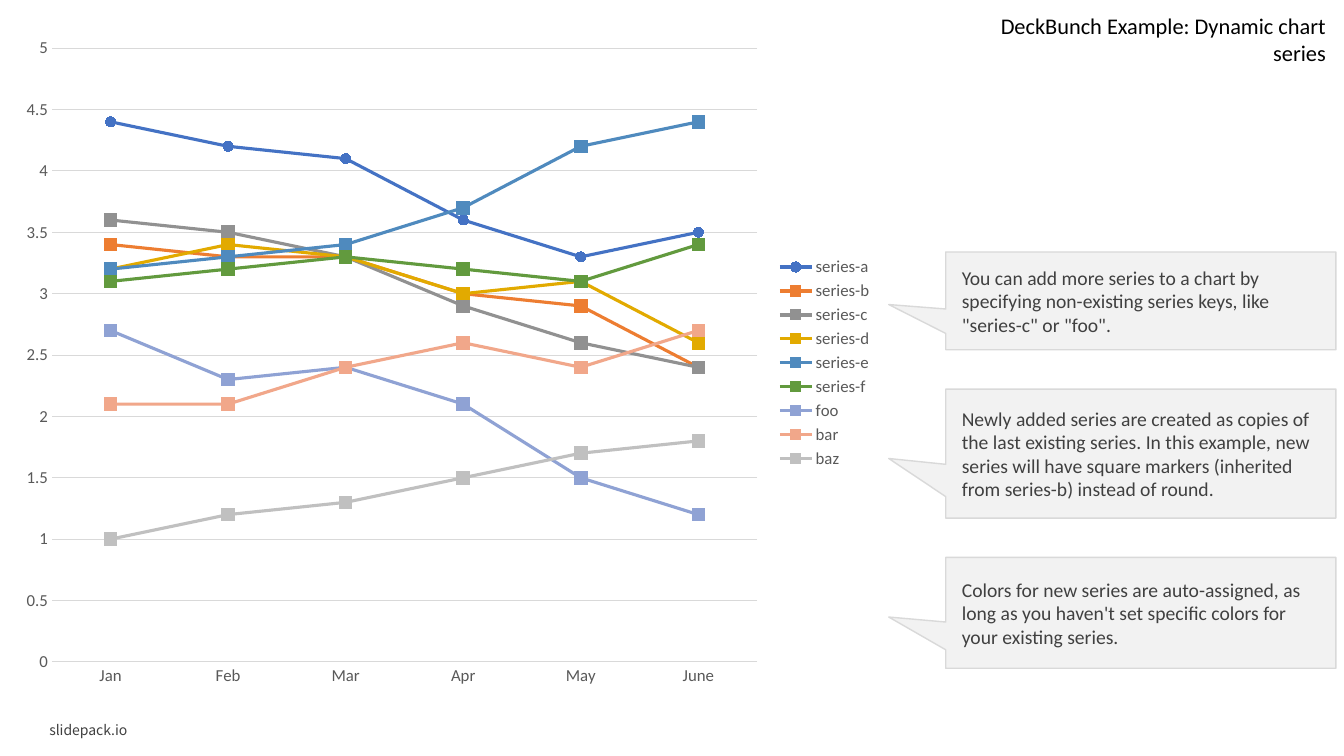
from lxml.etree import SubElement
from pptx import Presentation
from pptx.chart.data import CategoryChartData
from pptx.dml.color import RGBColor
from pptx.enum.chart import XL_CHART_TYPE, XL_LEGEND_POSITION, XL_MARKER_STYLE, XL_TICK_MARK
from pptx.enum.shapes import MSO_SHAPE
from pptx.enum.text import MSO_ANCHOR, MSO_AUTO_SIZE, PP_ALIGN
from pptx.oxml import parse_xml
from pptx.oxml.ns import nsdecls, qn
from pptx.util import Inches, Pt


def color(value):
    return RGBColor.from_string(value)


def set_font(font, size, value, name="Calibri"):
    formats = {"size": Pt(size), "name": name, "bold": False}
    for key, setting in formats.items():
        setattr(font, key, setting)
    font.color.rgb = color(value)


deck = Presentation()
deck.slide_width = Inches(13.33)
deck.slide_height = Inches(7.5)
page = deck.slides.add_slide(deck.slide_layouts[5])

title = page.shapes.title
title_place = {"left": 9.38, "top": 0.07, "width": 3.87, "height": 0.37}
for key, length in title_place.items():
    setattr(title, key, Inches(length))
title_format = {
    "text": "DeckBunch Example: Dynamic chart series",
    "word_wrap": False,
    "auto_size": MSO_AUTO_SIZE.NONE,
    "vertical_anchor": MSO_ANCHOR.TOP,
}
for key, setting in title_format.items():
    setattr(title.text_frame, key, setting)
title_para = title.text_frame.paragraphs[0]
title_para.alignment = PP_ALIGN.RIGHT
set_font(title_para.runs[0].font, 16, "000000")

footer = page.shapes.add_textbox(Inches(0.39), Inches(7.12), Inches(2.91), Inches(0.25))
footer_format = {
    "text": "slidepack.io",
    "word_wrap": True,
    "vertical_anchor": MSO_ANCHOR.MIDDLE,
}
for key, setting in footer_format.items():
    setattr(footer.text_frame, key, setting)
set_font(footer.text_frame.paragraphs[0].runs[0].font, 10, "404040", "Noto Sans CJK JP")

series_rows = [
    ("series-a", "4472C4", [4.4, 4.2, 4.1, 3.6, 3.3, 3.5]),
    ("series-b", "ED7D31", [3.4, 3.3, 3.3, 3, 2.9, 2.4]),
    ("series-c", "919191", [3.6, 3.5, 3.3, 2.9, 2.6, 2.4]),
    ("series-d", "E2AA00", [3.2, 3.4, 3.3, 3, 3.1, 2.6]),
    ("series-e", "4F8ABE", [3.2, 3.3, 3.4, 3.7, 4.2, 4.4]),
    ("series-f", "629A3E", [3.1, 3.2, 3.3, 3.2, 3.1, 3.4]),
    ("foo", "8FA2D4", [2.7, 2.3, 2.4, 2.1, 1.5, 1.2]),
    ("bar", "F1A78A", [2.1, 2.1, 2.4, 2.6, 2.4, 2.7]),
    ("baz", "C0C0C0", [1, 1.2, 1.3, 1.5, 1.7, 1.8]),
]
chart_data = CategoryChartData()
chart_data.categories = ["Jan", "Feb", "Mar", "Apr", "May", "June"]
for name, shade, values in series_rows:
    chart_data.add_series(name, values)
chart = page.shapes.add_chart(
    XL_CHART_TYPE.LINE_MARKERS,
    Inches(0.08), Inches(0.25), Inches(8.68), Inches(6.7),
    chart_data,
).chart
set_font(chart.font, 10, "000000")
chart.has_title = False
chart.plots[0].vary_by_categories = False

chart.has_legend = True
chart.legend.position = XL_LEGEND_POSITION.RIGHT
chart.legend.include_in_layout = False
set_font(chart.legend.font, 12, "595959")

for axis in (chart.category_axis, chart.value_axis):
    axis.major_tick_mark = XL_TICK_MARK.NONE
    axis.minor_tick_mark = XL_TICK_MARK.NONE
    set_font(axis.tick_labels.font, 12, "595959")
scale = {"minimum_scale": 0, "maximum_scale": 5, "major_unit": 0.5, "has_major_gridlines": True}
for key, setting in scale.items():
    setattr(chart.value_axis, key, setting)
chart.value_axis.format.line.fill.background()
for line in (chart.category_axis.format.line, chart.value_axis.major_gridlines.format.line):
    line.color.rgb = color("D9D9D9")
    line.width = Pt(0.75)

for series, (name, shade, values) in zip(chart.plots[0].series, series_rows):
    is_first = name == "series-a"
    series.smooth = False
    series.format.line.color.rgb = color(shade)
    series.format.line.width = Pt(2.25)
    series.marker.style = XL_MARKER_STYLE.CIRCLE if is_first else XL_MARKER_STYLE.SQUARE
    series.marker.size = 7 if is_first else 9
    series.marker.format.fill.solid()
    series.marker.format.fill.fore_color.rgb = color(shade)
    series.marker.format.line.color.rgb = color(shade)

plot_area = chart.plots[0]._element.getparent()
for layout in plot_area.findall(qn("c:layout")):
    plot_area.remove(layout)
layout = parse_xml(f"<c:layout {nsdecls('c')}/>")
manual = SubElement(layout, qn("c:manualLayout"))
plot_place = {
    "layoutTarget": "inner", "xMode": "edge", "yMode": "edge",
    "x": "0.05", "y": "0.034", "w": "0.806", "h": "0.909",
}
for tag, setting in plot_place.items():
    SubElement(manual, qn(f"c:{tag}")).set("val", setting)
plot_area.insert(0, layout)

callouts = [
    (2.5, 0.97, 'You can add more series to a chart by specifying non-existing series keys, like "series-c" or "foo".'),
    (3.86, 1.28, "Newly added series are created as copies of the last existing series. In this example, new series will have square markers (inherited from series-b) instead of round."),
    (5.53, 1.1, "Colors for new series are auto-assigned, as long as you haven't set specific colors for your existing series."),
]
for top, height, text in callouts:
    box = page.shapes.add_shape(
        MSO_SHAPE.RECTANGULAR_CALLOUT, Inches(9.38), Inches(top), Inches(3.87), Inches(height)
    )
    box.adjustments[0] = -0.646
    box.adjustments[1] = 0.038
    box.shadow.inherit = False
    box.fill.solid()
    box.fill.fore_color.rgb = color("F2F2F2")
    box.line.color.rgb = color("D9D9D9")
    box.line.width = Pt(1)
    frame_format = {"text": text, "word_wrap": True, "vertical_anchor": MSO_ANCHOR.MIDDLE}
    for side in ("left", "top", "right", "bottom"):
        frame_format[f"margin_{side}"] = Inches(0.16)
    for key, setting in frame_format.items():
        setattr(box.text_frame, key, setting)
    para = box.text_frame.paragraphs[0]
    para.alignment = PP_ALIGN.LEFT
    set_font(para.runs[0].font, 14, "404040")

deck.save("out.pptx")
